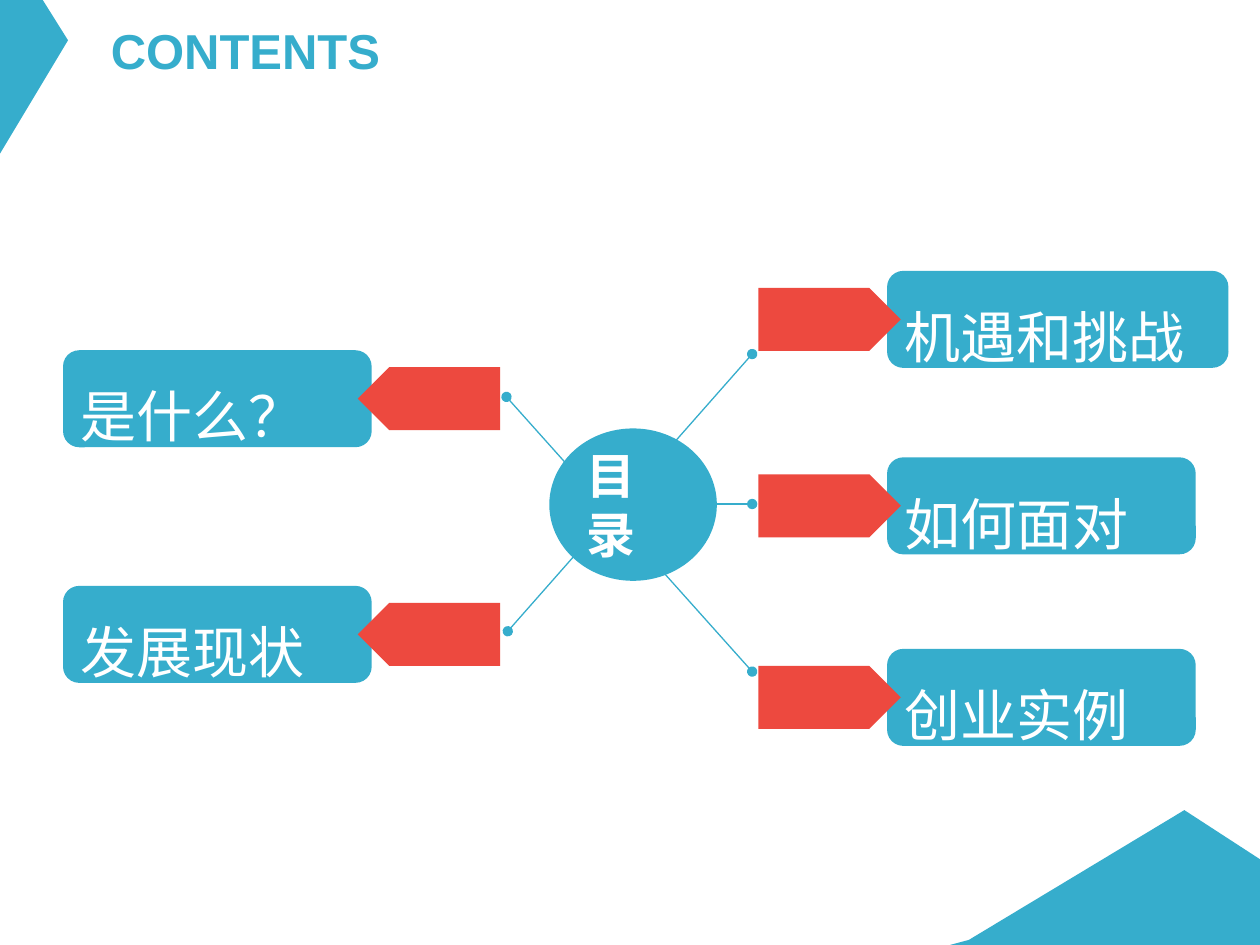
import pptx
import pptx.util
import pptx.dml.color
import pptx.enum.shapes
import pptx.enum.text
from dataclasses import dataclass
from lxml import etree

Inches = pptx.util.Inches
SHAPE = pptx.enum.shapes.MSO_SHAPE
ANCHOR = pptx.enum.text.MSO_ANCHOR
LEFT = pptx.enum.text.PP_ALIGN.LEFT
NS = "http://schemas.openxmlformats.org/drawingml/2006/main"


@dataclass(frozen=True)
class Theme:
    blue: str = "36ADCC"
    red: str = "ED493F"
    white: str = "FFFFFF"
    latin: str = "Arial"
    han: str = "Noto Sans CJK SC"
    head: int = 28
    hub: int = 28
    item: int = 32
    line: float = 0.75


THEME = Theme()


def rgb(code):
    return pptx.dml.color.RGBColor.from_string(code)


def add_node(parent, name, **attrs):
    return etree.SubElement(parent, f"{{{NS}}}{name}", **attrs)


def paint(shape, color):
    shape.shadow.inherit = False
    shape.fill.solid()
    shape.fill.fore_color.rgb = rgb(color)
    shape.line.fill.background()


def write(shape, text, size, color, face, bold=False, space=None):
    frame = shape.text_frame
    frame.word_wrap = True
    frame.auto_size = pptx.enum.text.MSO_AUTO_SIZE.NONE
    frame.vertical_anchor = ANCHOR.MIDDLE
    para = frame.paragraphs[0]
    para.alignment = LEFT
    if space:
        para.line_spacing = space
    run = para.add_run()
    run.text = text
    run.font.size = pptx.util.Pt(size)
    run.font.bold = bold
    run.font.color.rgb = rgb(color)
    run.font.name = face
    add_node(run._r.get_or_add_rPr(), "ea", typeface=face)


def add_part(slide, kind, box, color):
    shape = slide.shapes.add_shape(kind, *map(Inches, box))
    paint(shape, color)
    return shape


def add_corner(slide, box, points):
    """Draw a corner polygon from points measured inside its box."""
    left, top = box[:2]
    spots = [(Inches(left + x), Inches(top + y)) for x, y in points]
    build = slide.shapes.build_freeform(*spots[0], scale=1.0)
    build.add_line_segments(spots[1:], close=True)
    paint(build.convert_to_shape(), THEME.blue)


def add_title(slide, box, text):
    title = slide.shapes.title
    title.left, title.top, title.width, title.height = map(Inches, box)
    write(title, text, THEME.head, THEME.blue, THEME.latin, bold=True)


def add_item(slide, box, text, flip=False):
    """Place a label and a red tag that points into it."""
    left, top, width, height = box
    tag_w, tag_h, lap = 1.13, 0.5, 0.11
    label_w = width - tag_w + lap
    label_x = left if flip else left + width - label_w
    tag_x = left + width - tag_w if flip else left
    label = add_part(slide, SHAPE.ROUNDED_RECTANGLE,
                     (label_x, top, label_w, height), THEME.blue)
    write(label, text, THEME.item, THEME.white, THEME.han, space=1.5)
    tag = add_part(slide, SHAPE.PENTAGON,
                   (tag_x, top + (height - tag_h) / 2, tag_w, tag_h), THEME.red)
    if flip:
        tag._element.spPr.xfrm.set("flipH", "1")


def add_spoke(slide, start, end):
    spoke = slide.shapes.add_connector(
        pptx.enum.shapes.MSO_CONNECTOR.STRAIGHT, *map(Inches, start + end))
    spoke.line.width = pptx.util.Pt(THEME.line)
    spoke.line.color.rgb = rgb(THEME.blue)
    props = spoke._element.spPr
    line = props.find(f"{{{NS}}}ln")
    for name in ("headEnd", "tailEnd"):
        add_node(line, name, type="oval")
    add_node(props, "effectLst")


def add_hub(slide, box, text):
    """Place the centre circle over the spokes that cross behind it."""
    left, top = box[:2]
    spokes = [((0.27, 0.6), (1.61, 0.6)),
              ((1.61, 1.93), (-0.34, -0.25)),
              ((-0.33, 1.61), (1.61, -0.59))]
    for ends in spokes:
        add_spoke(slide, *[(left + x, top + y) for x, y in ends])
    hub = add_part(slide, SHAPE.OVAL, box, THEME.blue)
    write(hub, text, THEME.hub, THEME.white, THEME.han, bold=True)


def add_contents(slide):
    # Corner shapes
    add_corner(slide, (0, 0, 0.54, 1.22),
               [(0, 0), (0.34, 0), (0.54, 0.32), (0, 1.22)])
    add_corner(slide, (7.54, 6.43, 2.46, 1.07),
               [(0, 1.07), (0.15, 1.03), (1.86, 0), (2.46, 0.39), (2.46, 1.07)])

    # Heading
    add_title(slide, (0.78, 0.11, 3.18, 0.57), "CONTENTS")

    # Centre and items
    add_hub(slide, (4.36, 3.4, 1.33, 1.21), "目录")
    for top, text in [(2.78, "是什么？"), (4.65, "发展现状")]:
        add_item(slide, (0.5, top, 3.47, 0.77), text, flip=True)
    for top, width, text in [(2.15, 3.73, "机遇和挑战"),
                             (3.63, 3.47, "如何面对"),
                             (5.15, 3.47, "创业实例")]:
        add_item(slide, (6.02, top, width, 0.77), text)


def main():
    deck = pptx.Presentation()
    deck.slide_width, deck.slide_height = Inches(10), Inches(7.5)
    add_contents(deck.slides.add_slide(deck.slide_layouts[5]))
    deck.save("out.pptx")


if __name__ == "__main__":
    main()
